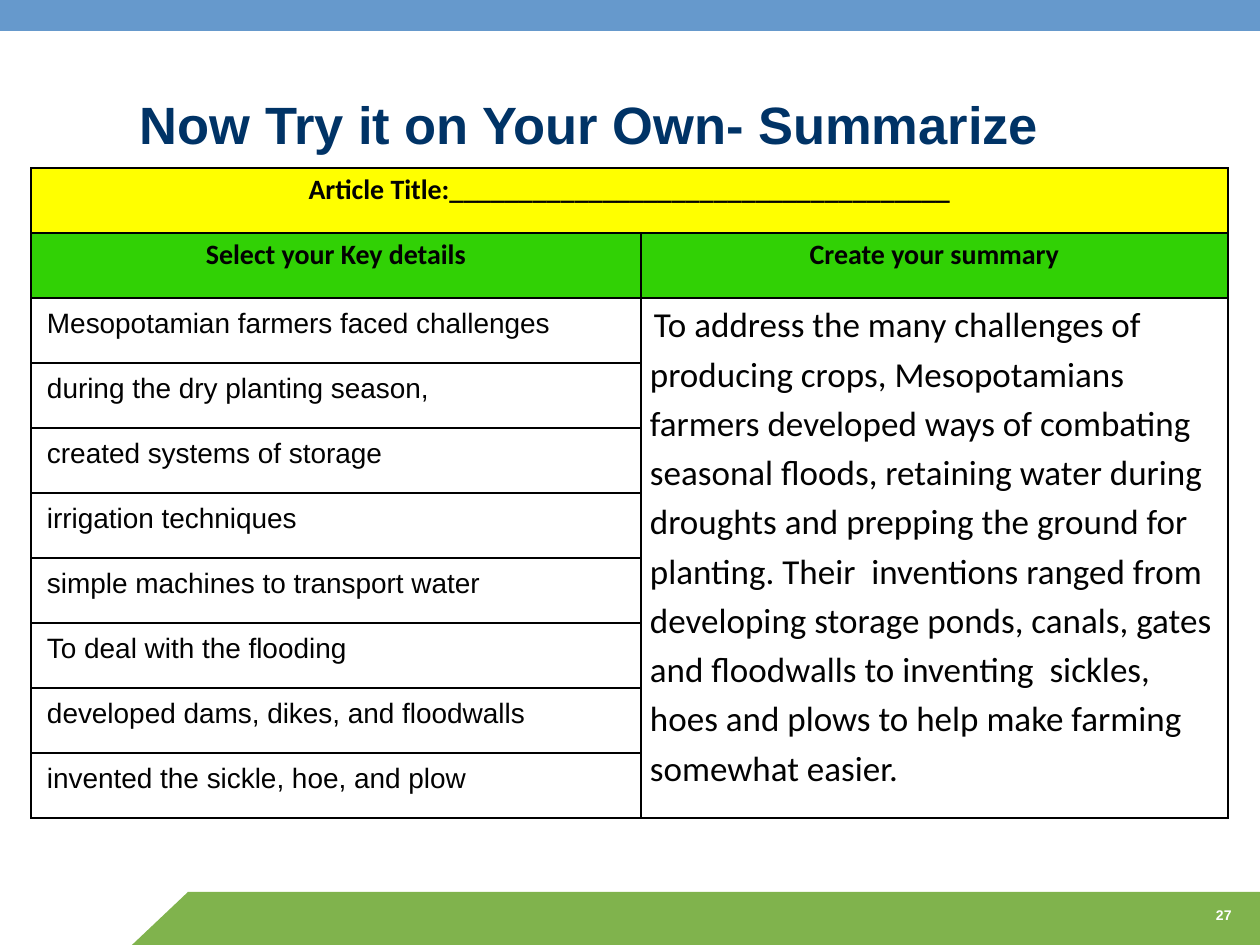
import pptx
import pptx.util
import pptx.dml.color
import pptx.enum.shapes
import pptx.enum.text
import pptx.oxml
import pptx.oxml.ns

RGB = pptx.dml.color.RGBColor
SHAPE = pptx.enum.shapes.MSO_SHAPE
ALIGN = pptx.enum.text.PP_ALIGN
ANCHOR = pptx.enum.text.MSO_ANCHOR

SCALE = 914400 / 126  # EMU in one px

WHITE = RGB(0xFF, 0xFF, 0xFF)
INK = RGB(0x02, 0x02, 0x02)
NAVY = RGB(0x00, 0x33, 0x66)
BLUE = RGB(0x66, 0x99, 0xCC)
GREEN = RGB(0x80, 0xB3, 0x4D)
YELLOW = RGB(0xFF, 0xFF, 0x00)
LIME = RGB(0x31, 0xD1, 0x05)

ROW = 65
COLS = (610, 587)
DETAILS = (
    "Mesopotamian farmers faced challenges",
    "during the dry planting season,",
    "created systems of storage",
    "irrigation techniques",
    "simple machines to transport water",
    "To deal with the flooding",
    "developed dams, dikes, and floodwalls",
    "invented the sickle, hoe, and plow",
)
SUMMARY = (
    "To address the many challenges of producing crops, Mesopotamians farmers "
    "developed ways of combating seasonal floods, retaining water during "
    "droughts and prepping the ground for planting. Their  inventions ranged "
    "from developing storage ponds, canals, gates and floodwalls to inventing  "
    "sickles, hoes and plows to help make farming somewhat easier."
)


def px(num):
    return pptx.util.Emu(round(num * SCALE))


def write(frame, text, size=16, font="Arial", color=INK, bold=False,
          align=ALIGN.LEFT, space=None, indent=0):
    """Fill a text frame with one formatted paragraph."""
    frame.word_wrap = True
    para = frame.paragraphs[0]
    para.alignment = align
    if space:
        para.line_spacing = space
    if indent:
        para._p.get_or_add_pPr().set("indent", str(px(indent)))
    run = para.add_run()
    run.text = text
    run.font.size = pptx.util.Pt(size)
    run.font.name = font
    run.font.bold = bold
    run.font.color.rgb = color


def edge(cell):
    """Draw a thin black border on all four sides of a cell."""
    props = cell._tc.get_or_add_tcPr()
    for side in "LRTB":
        props.append(pptx.oxml.parse_xml(
            f'<a:ln{side} {pptx.oxml.ns.nsdecls("a")} w="12700"><a:solidFill>'
            f'<a:srgbClr val="000000"/></a:solidFill></a:ln{side}>'))


class Page:
    def __init__(self, deck):
        self.slide = deck.slides.add_slide(deck.slide_layouts[6])
        self.shapes = self.slide.shapes

    def block(self, kind, box, color, flip=False):
        shape = self.shapes.add_shape(kind, *map(px, box))
        shape.shadow.inherit = False
        shape.fill.solid()
        shape.fill.fore_color.rgb = color
        shape.line.fill.background()
        if flip:
            shape._element.spPr.xfrm.set("flipH", "1")

    def label(self, box, text, anchor=ANCHOR.TOP, **style):
        frame = self.shapes.add_textbox(*map(px, box)).text_frame
        frame.vertical_anchor = anchor
        write(frame, text, **style)

    def grid(self, left, top, cols, rows):
        """Add a plain bordered table with equal rows."""
        table = self.shapes.add_table(
            rows, len(cols), px(left), px(top), px(sum(cols)), px(rows * ROW)).table
        table.first_row = table.horz_banding = False
        for col, width in zip(table.columns, cols):
            col.width = px(width)
        for row in table.rows:
            row.height = px(ROW)
        for cell in table.iter_cells():
            edge(cell)
            cell.fill.background()
        return table

    def cell(self, cell, text, fill=None, left=9, top=0, **style):
        cell.margin_left, cell.margin_right = px(left), px(9)
        cell.margin_top, cell.margin_bottom = px(top), px(0)
        if fill is not None:
            cell.fill.solid()
            cell.fill.fore_color.rgb = fill
        write(cell.text_frame, text, space=1.15, **style)


def main():
    deck = pptx.Presentation()
    deck.slide_width, deck.slide_height = px(1260), px(945)
    page = Page(deck)

    page.block(SHAPE.RECTANGLE, (188, 892, 1072, 53), GREEN)
    page.block(SHAPE.RIGHT_TRIANGLE, (132, 892, 56, 53), GREEN, flip=True)
    page.block(SHAPE.RECTANGLE, (0, 0, 1260, 31), BLUE)
    page.label((54, 77, 1071, 84), "Now Try it on Your Own- Summarize",
               anchor=ANCHOR.BOTTOM, size=30, color=NAVY, bold=True,
               align=ALIGN.CENTER)

    table = page.grid(31, 168, COLS, len(DETAILS) + 2)
    table.cell(0, 0).merge(table.cell(0, 1))
    table.cell(2, 1).merge(table.cell(len(DETAILS) + 1, 1))
    head = dict(font="Calibri", bold=True, align=ALIGN.CENTER)
    page.cell(table.cell(0, 0), "Article Title:" + "_" * 36, YELLOW, **head)
    page.cell(table.cell(1, 0), "Select your Key details", LIME, **head)
    page.cell(table.cell(1, 1), "Create your summary", LIME, **head)
    for row, text in enumerate(DETAILS, 2):
        page.cell(table.cell(row, 0), text, left=16, top=6)
    page.cell(table.cell(2, 1), SUMMARY, size=20, font="Calibri", indent=4)

    page.label((1081, 900, 163, 32), "27", size=8, color=WHITE, bold=True,
               align=ALIGN.RIGHT)
    deck.save("out.pptx")


if __name__ == "__main__":
    main()
